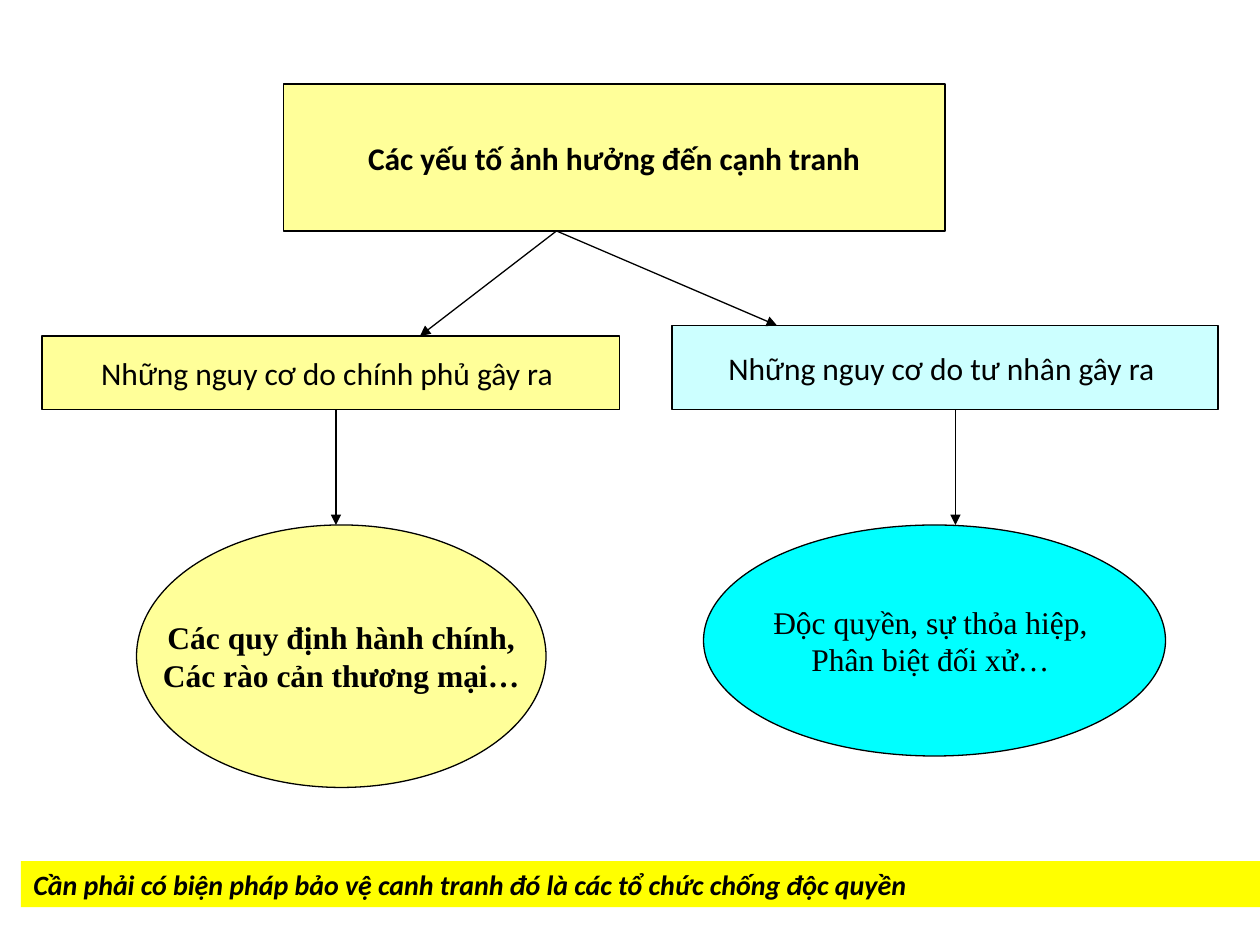
from lxml.etree import SubElement
from pptx import Presentation
from pptx.dml.color import RGBColor
from pptx.enum.shapes import MSO_CONNECTOR, MSO_SHAPE
from pptx.enum.text import MSO_ANCHOR, PP_ALIGN
from pptx.oxml.ns import qn
from pptx.util import Pt

PX = 914400 // 120  # 120 px to the inch
COLORS = {"ink": "000000", "cream": "FFFF99", "ice": "CCFFFF", "cyan": "00FFFF", "bar": "FFFF00"}
SANS, SERIF = "Calibri", "Times New Roman"


def emu(*lengths):
    return [n * PX for n in lengths]


def rgb(name):
    return RGBColor.from_string(COLORS[name])


def outline(line):
    line.color.rgb = rgb("ink")
    line.width = Pt(0.75)


def add_line(p, text, font, size=18, bold=False, italic=False):
    r = p.add_run()
    r.text = text
    f = r.font
    f.name, f.size, f.bold, f.italic = font, Pt(size), bold, italic
    f.color.rgb = rgb("ink")


def style_node(sp, fill, lines, font=SANS, bold=False):
    """Fill and outline a diagram node and centre its lines of text."""
    sp.fill.solid()
    sp.fill.fore_color.rgb = rgb(fill)
    outline(sp.line)
    tf = sp.text_frame
    tf.word_wrap = False
    tf.vertical_anchor = MSO_ANCHOR.MIDDLE
    for i, text in enumerate(lines):
        p = tf.add_paragraph() if i else tf.paragraphs[0]
        p.alignment = PP_ALIGN.CENTER
        add_line(p, text, font, bold=bold)


def add_node(s, kind, box, *style, **options):
    sp = s.shapes.add_shape(kind, *emu(*box))
    sp.shadow.inherit = False
    style_node(sp, *style, **options)


def add_arrow(s, start, end):
    cx = s.shapes.add_connector(MSO_CONNECTOR.STRAIGHT, *emu(*start, *end))
    outline(cx.line)
    SubElement(cx.line._get_or_add_ln(), qn("a:tailEnd"), type="triangle")
    SubElement(cx._element.spPr, qn("a:effectLst"))


def add_heading(s, box, text):
    sp = s.shapes.title
    sp.left, sp.top, sp.width, sp.height = emu(*box)
    style_node(sp, "cream", [text], bold=True)


def add_branch(s, box, root, cause, cause_fill, examples, fill, oval, entry, drop, bold=False):
    """Cause box with its oval of examples; oval, entry and drop are relative to the box."""
    x, y, w, h = box
    dx, dy, ow, oh = oval
    add_node(s, MSO_SHAPE.RECTANGLE, box, cause_fill, [cause])
    add_node(s, MSO_SHAPE.OVAL, (x + dx, y + h + dy, ow, oh), fill, examples, font=SERIF, bold=bold)
    add_arrow(s, root, (x + entry, y))
    add_arrow(s, (x + drop, y + h), (x + drop, y + h + dy))


def add_conclusion(s, box, text):
    sp = s.shapes.add_textbox(*emu(*box))
    sp.fill.solid()
    sp.fill.fore_color.rgb = rgb("bar")
    tf = sp.text_frame
    tf.word_wrap = True
    p = tf.paragraphs[0]
    p.space_before = Pt(8)
    add_line(p, text, SANS, size=16, bold=True, italic=True)


def main():
    prs = Presentation()
    prs.slide_width, prs.slide_height = emu(1200, 900)
    s = prs.slides.add_slide(prs.slide_layouts[5])
    root = (530, 220)
    add_heading(s, (270, 80, 630, 140), "Các yếu tố ảnh hưởng đến cạnh tranh")
    add_branch(s, (40, 320, 550, 70), root, "Những nguy cơ do chính phủ gây ra ", "cream",
               ["Các quy định hành chính,", "Các rào cản thương mại…"], "cream",
               oval=(90, 110, 390, 250), entry=360, drop=280, bold=True)
    add_branch(s, (640, 310, 520, 80), root, "Những nguy cơ do tư nhân gây ra ", "ice",
               ["Độc quyền, sự thỏa hiệp, ", "Phân biệt đối xử… "], "cyan",
               oval=(30, 110, 440, 220), entry=100, drop=270)
    add_conclusion(s, (20, 820, 1180, 44),
                   "Cần phải có biện pháp bảo vệ canh tranh đó là các tổ chức chống độc quyền")
    prs.save("out.pptx")


if __name__ == "__main__":
    main()
